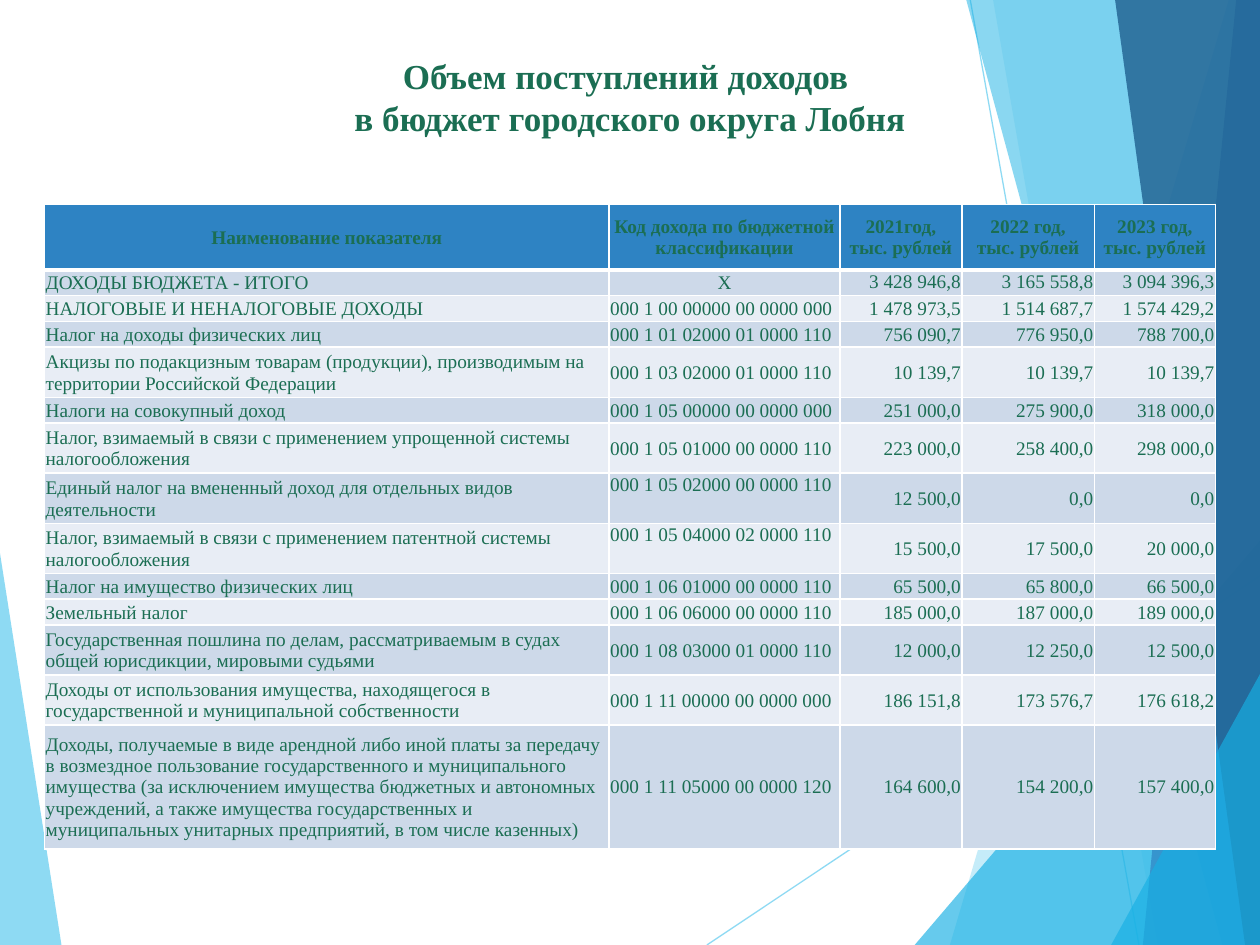
from dataclasses import dataclass

from lxml import etree
from pptx import Presentation
from pptx.dml.color import RGBColor
from pptx.enum.text import MSO_ANCHOR, PP_ALIGN
from pptx.oxml.ns import qn
from pptx.util import Cm, Pt

LEFT, CENTER, RIGHT = PP_ALIGN.LEFT, PP_ALIGN.CENTER, PP_ALIGN.RIGHT
TOP, MIDDLE = MSO_ANCHOR.TOP, MSO_ANCHOR.MIDDLE


@dataclass(frozen=True)
class Theme:
    font: str = "Times New Roman"
    text: str = "1B6E53"
    white: str = "FFFFFF"
    header: str = "2E83C3"
    bands: tuple = ("CDD9E9", "E8EDF5")
    sky: str = "5FCBEF"
    cyan: str = "17B0E4"
    blue: str = "2E83C3"
    navy: str = "226292"
    title_size: int = 20
    table_size: int = 11


T = Theme()
W, H = 25.4, 19.05

FACETS = [
    (T.sky, 70, [(0, 11.15), (1.24, H), (0, H)]),
    (T.sky, 36, [(24.77, 0), (19.15, H), (W, H), (W, 0)]),
    (T.sky, 20, [(20.02, 0), (23.34, H), (W, H), (W, 0)]),
    (T.cyan, 66, [(18.44, H), (W, 10.9), (W, H)]),
    (T.cyan, 50, [(19.48, 0), (24.64, H), (W, H), (W, 0)]),
    (T.blue, 70, [(24.92, 0), (23.04, H), (W, H), (W, 0)]),
    (T.navy, 82, [(22.48, 0), (25.1, H), (W, H), (W, 0)]),
    (T.cyan, 66, [(22.4, H), (W, 13.59), (W, H)]),
]
RAYS = [(14.25, H, W, 11.61), (19.56, 0, 22.96, H)]

COLUMNS = [11.38, 4.65, 2.46, 2.67, 2.44]
ROW_HEIGHTS = {1: 0.52, 2: 1.01, 5: 2.49}
HEADER_HEIGHT = 1.32
HEADER = [
    "Наименование показателя",
    "Код дохода по бюджетной классификации",
    "2021год,\nтыс. рублей",
    "2022 год,\nтыс. рублей",
    "2023 год,\nтыс. рублей",
]
INCOME = [
    (1, "ДОХОДЫ БЮДЖЕТА - ИТОГО", "Х", "3 428 946,8", "3 165 558,8", "3 094 396,3"),
    (1, "НАЛОГОВЫЕ И НЕНАЛОГОВЫЕ ДОХОДЫ", "000 1 00 00000 00 0000 000",
     "1 478 973,5", "1 514 687,7", "1 574 429,2"),
    (1, "Налог на доходы физических лиц", "000 1 01 02000 01 0000 110",
     "756 090,7", "776 950,0", "788 700,0"),
    (2, "Акцизы по подакцизным товарам (продукции), производимым на территории "
     "Российской Федерации", "000 1 03 02000 01 0000 110", "10 139,7", "10 139,7", "10 139,7"),
    (1, "Налоги на совокупный доход", "000 1 05 00000 00 0000 000",
     "251 000,0", "275 900,0", "318 000,0"),
    (2, "Налог, взимаемый в связи с применением упрощенной системы налогообложения",
     "000 1 05 01000 00 0000 110", "223 000,0", "258 400,0", "298 000,0"),
    (2, "Единый налог на вмененный доход для отдельных видов деятельности",
     "000 1 05 02000 00 0000 110", "12 500,0", "0,0", "0,0"),
    (2, "Налог, взимаемый в связи с применением патентной системы налогообложения",
     "000 1 05 04000 02 0000 110", "15 500,0", "17 500,0", "20 000,0"),
    (1, "Налог на имущество физических лиц", "000 1 06 01000 00 0000 110",
     "65 500,0", "65 800,0", "66 500,0"),
    (1, "Земельный налог", "000 1 06 06000 00 0000 110",
     "185 000,0", "187 000,0", "189 000,0"),
    (2, "Государственная пошлина по делам, рассматриваемым в судах общей юрисдикции, "
     "мировыми судьями", "000 1 08 03000 01 0000 110", "12 000,0", "12 250,0", "12 500,0"),
    (2, "Доходы от использования имущества, находящегося в государственной и "
     "муниципальной собственности", "000 1 11 00000 00 0000 000",
     "186 151,8", "173 576,7", "176 618,2"),
    (5, "Доходы, получаемые в виде арендной либо иной платы за передачу в возмездное "
     "пользование государственного и муниципального имущества (за исключением имущества "
     "бюджетных и автономных учреждений, а также имущества государственных и "
     "муниципальных унитарных предприятий, в том числе казенных)",
     "000 1 11 05000 00 0000 120", "164 600,0", "154 200,0", "157 400,0"),
]
TOP_ANCHORED = {(1, 2), (1, 3), (1, 4), (7, 1), (8, 1)}


def rgb(color):
    return RGBColor.from_string(color)


def paint(fill, color, alpha=100):
    fill.solid()
    fill.fore_color.rgb = rgb(color)
    if alpha < 100:
        for clr in fill._xPr.iter(qn("a:srgbClr")):
            etree.SubElement(clr, qn("a:alpha"), val=str(alpha * 1000))


def style_text(tf, size, align, bold):
    for p in tf.paragraphs:
        p.alignment = align
        for r in p.runs:
            r.font.name = T.font
            r.font.size = Pt(size)
            r.font.bold = bold
            r.font.color.rgb = rgb(T.text)


def add_facet(s, x, y, color, alpha, points):
    corners = [(Cm(x + px), Cm(y + py)) for px, py in points]
    fb = s.shapes.build_freeform(*corners[0], scale=1.0)
    fb.add_line_segments(corners[1:], close=True)
    sp = fb.convert_to_shape()
    sp.shadow.inherit = False
    sp.line.fill.background()
    paint(sp.fill, color, alpha)


def add_ray(s, x, y, ray):
    x1, y1, x2, y2 = ray
    line = s.shapes.add_connector(1, Cm(x + x1), Cm(y + y1), Cm(x + x2), Cm(y + y2))
    line.line.width = Pt(0.75)
    paint(line.line.fill, T.sky, 70)
    etree.SubElement(line._element.spPr, qn("a:effectLst"))


def add_backdrop(s, x, y):
    add_facet(s, x, y, *FACETS[0])
    for ray in RAYS:
        add_ray(s, x, y, ray)
    for facet in FACETS[1:]:
        add_facet(s, x, y, *facet)


def add_title(s, x, y, w, h):
    tf = s.shapes.add_textbox(Cm(x), Cm(y), Cm(w), Cm(h)).text_frame
    tf.word_wrap = True
    tf.text = "Объем поступлений доходов \vв бюджет городского округа Лобня"
    style_text(tf, T.title_size, CENTER, True)


def set_borders(cell, row):
    tcPr = cell._tc.get_or_add_tcPr()
    widths = {"lnL": 1, "lnR": 1, "lnT": 3 if row == 1 else 1, "lnB": 3 if row == 0 else 1}
    for i, (side, width) in enumerate(widths.items()):
        ln = etree.Element(qn(f"a:{side}"), w=str(Pt(width)))
        fill = etree.SubElement(ln, qn("a:solidFill"))
        etree.SubElement(fill, qn("a:srgbClr"), val=T.white)
        tcPr.insert(i, ln)


def fill_cell(cell, row, col, text):
    cell.margin_left = cell.margin_right = cell.margin_top = Cm(0.02)
    cell.margin_bottom = 0
    cell.vertical_anchor = TOP if (row, col) in TOP_ANCHORED else MIDDLE
    cell.text_frame.text = text
    if row == 0 or (row, col) == (1, 1):
        align = CENTER
    else:
        align = RIGHT if col > 1 else LEFT
    style_text(cell.text_frame, T.table_size, align, row == 0)
    paint(cell.fill, T.bands[(row - 1) % 2] if row else T.header)
    set_borders(cell, row)


def add_income_table(s, x, y):
    heights = [HEADER_HEIGHT] + [ROW_HEIGHTS[lines] for lines, *_ in INCOME]
    rows = [HEADER] + [texts for _, *texts in INCOME]
    table = s.shapes.add_table(len(rows), len(COLUMNS), Cm(x), Cm(y),
                               Cm(sum(COLUMNS)), Cm(sum(heights))).table
    for column, width in zip(table.columns, COLUMNS):
        column.width = Cm(width)
    for i, texts in enumerate(rows):
        table.rows[i].height = Cm(heights[i])
        for j, text in enumerate(texts):
            fill_cell(table.cell(i, j), i, j, text)


def main():
    prs = Presentation()
    prs.slide_width, prs.slide_height = Cm(W), Cm(H)
    s = prs.slides.add_slide(prs.slide_layouts[6])
    add_backdrop(s, 0, 0)
    add_title(s, 0.3, 0.98, 24.8, 3)
    add_income_table(s, 0.9, 4.12)
    prs.save("out.pptx")


if __name__ == "__main__":
    main()
